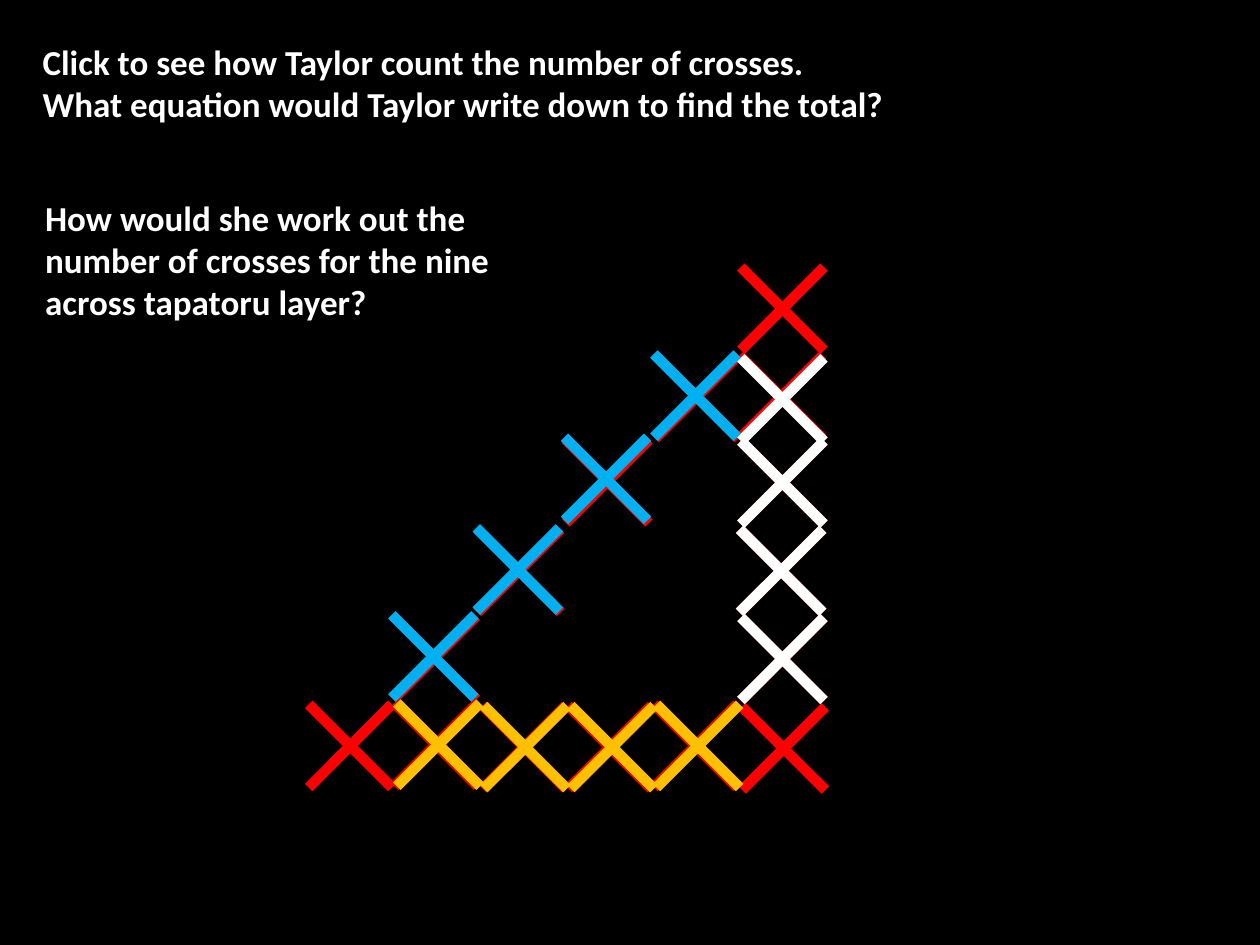
from typing import NamedTuple

from lxml.etree import SubElement
from pptx import Presentation
from pptx.dml.color import RGBColor
from pptx.enum.shapes import MSO_CONNECTOR
from pptx.enum.text import MSO_AUTO_SIZE
from pptx.oxml.ns import qn
from pptx.slide import Slide
from pptx.util import Inches, Pt

BLACK = RGBColor(0x00, 0x00, 0x00)
WHITE = RGBColor(0xFF, 0xFF, 0xFF)
RED = RGBColor(0xFF, 0x00, 0x00)
BLUE = RGBColor(0x00, 0xB0, 0xF0)
GOLD = RGBColor(0xFF, 0xC0, 0x00)
CROSS_SIZE = 0.66


class CrossSet(NamedTuple):
    color: RGBColor
    corners: list[tuple[float, float]]


LAYER = CrossSet(RED, [
    (3.79, 4.2), (4.49, 3.49), (3.13, 5.58), (2.45, 5.59), (3.12, 4.89),
    (3.83, 5.6), (5.19, 5.59), (4.51, 5.6), (5.89, 5.61), (5.87, 4.2),
    (5.88, 3.5), (5.87, 2.82), (5.2, 2.82), (5.88, 4.9), (5.88, 2.12),
])
BOTTOM_SIDE = CrossSet(GOLD, [(3.15, 5.58), (3.84, 5.6), (5.21, 5.59), (4.53, 5.6)])
RIGHT_SIDE = CrossSet(WHITE, [(5.87, 4.2), (5.88, 3.5), (5.88, 2.84), (5.88, 4.9)])
SLOPING_SIDE = CrossSet(BLUE, [(3.78, 4.19), (4.48, 3.47), (3.11, 4.88), (5.19, 2.81)])


def add_text(slide: Slide, text: str, *, left: float, top: float, width: float,
             height: float, size: float = 20, color: RGBColor = WHITE,
             bold: bool = True, font: str = "Calibri") -> None:
    box = slide.shapes.add_textbox(Inches(left), Inches(top), Inches(width), Inches(height))
    frame = box.text_frame
    frame.text = text
    frame.word_wrap = True
    frame.auto_size = MSO_AUTO_SIZE.SHAPE_TO_FIT_TEXT
    for paragraph in frame.paragraphs:
        for run in paragraph.runs:
            run.font.name = font
            run.font.size = Pt(size)
            run.font.bold = bold
            run.font.color.rgb = color


def add_cross(slide: Slide, left: float, top: float, color: RGBColor) -> None:
    cross = slide.shapes.add_group_shape()
    right, bottom = left + CROSS_SIZE, top + CROSS_SIZE
    for start, end in ((left, right), (right, left)):
        stroke = cross.shapes.add_connector(
            MSO_CONNECTOR.STRAIGHT, Inches(start), Inches(top), Inches(end), Inches(bottom))
        stroke.line.color.rgb = color
        stroke.line.width = Pt(6)
        SubElement(stroke._element.spPr, qn("a:effectLst"))


def main() -> None:
    """Build the slide on counting the crosses of a tapatoru layer."""
    presentation = Presentation()
    presentation.slide_width = Inches(10)
    presentation.slide_height = Inches(7.5)
    slide = presentation.slides.add_slide(presentation.slide_layouts[6])
    slide.background.fill.solid()
    slide.background.fill.fore_color.rgb = BLACK

    add_text(slide, "Click to see how Taylor count the number of crosses.\n"
             "What equation would Taylor write down to find the total?",
             left=0.24, top=0.27, width=9.53, height=0.77)
    for crosses in (LAYER, BOTTOM_SIDE, RIGHT_SIDE, SLOPING_SIDE):
        for left, top in crosses.corners:
            add_cross(slide, left, top, crosses.color)
    add_text(slide, "How would she work out the number of crosses for the nine "
             "across tapatoru layer?", left=0.26, top=1.51, width=4.43, height=1.11)

    presentation.save("out.pptx")


if __name__ == "__main__":
    main()
